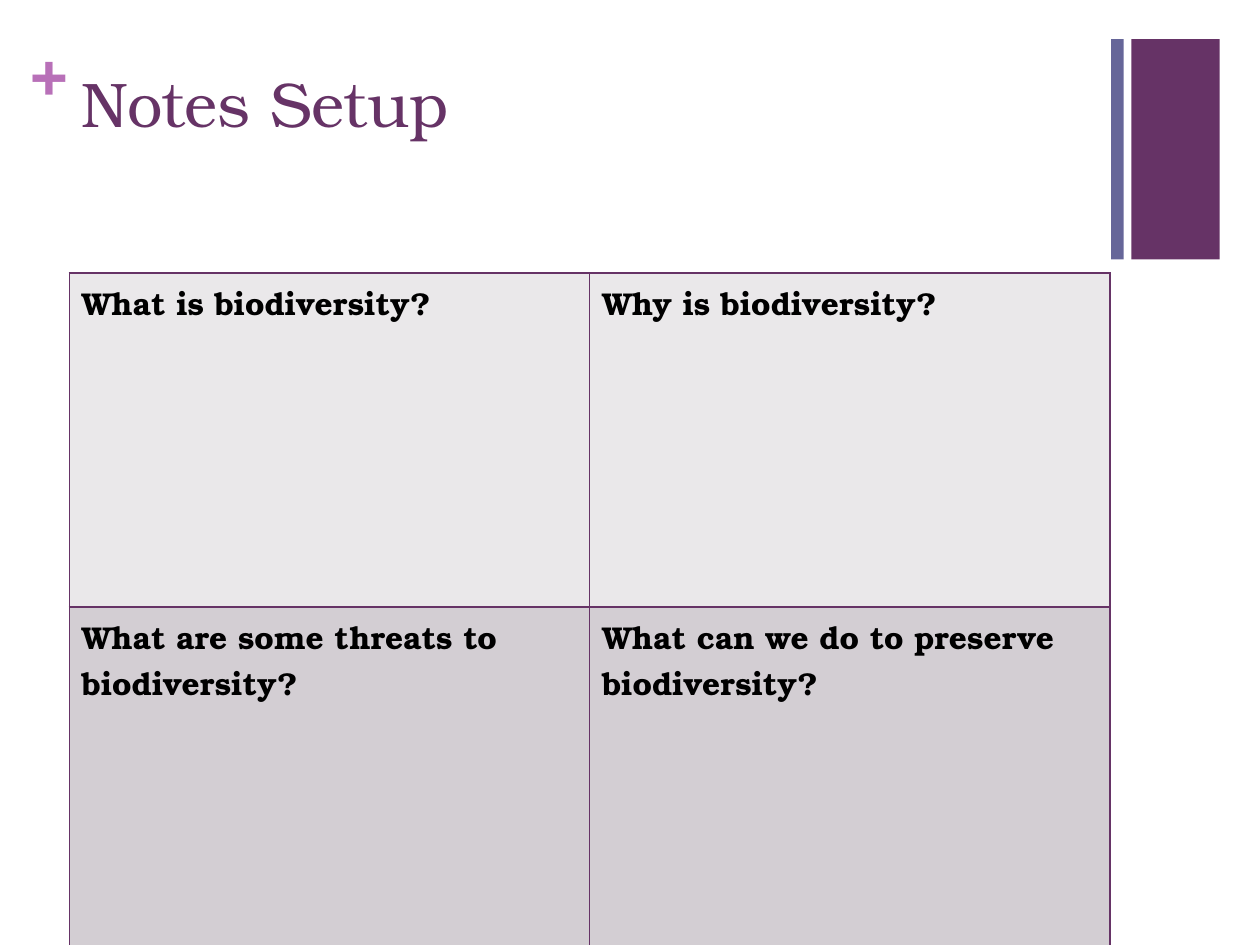
import pptx
import pptx.util
import pptx.dml.color
import pptx.enum.shapes
import pptx.oxml
import pptx.oxml.ns

Pt = pptx.util.Pt
FONT = "TeX Gyre Bonum"
PLUM = "663366"
TITLE = "Notes Setup"
ROWS = [
    ("EAE8EA", 191, ["What is biodiversity?", "Why is biodiversity?"]),
    ("D3CED3", 200, ["What are some threats to biodiversity?",
                     "What can we do to preserve biodiversity?"]),
]
BARS = [(646.5, 50.5, PLUM), (635, 7.2, "666699")]
LEFT, TOP, WIDTH = 39.6, 156, 594.8


def color(code):
    return pptx.dml.color.RGBColor.from_string(code)


def write(frame, text, size=18, ink="000000", bold=False, space=None):
    frame.word_wrap = True
    para = frame.paragraphs[0]
    para.line_spacing = space
    run = para.add_run()
    run.text = text
    font = run.font
    font.name, font.size, font.bold = FONT, Pt(size), bold
    font.color.rgb = color(ink)


def label(slide, box, text, inset=None, **style):
    frame = slide.shapes.add_textbox(*map(Pt, box)).text_frame
    if inset is not None:
        frame.margin_left = frame.margin_right = Pt(inset)
        frame.margin_top = frame.margin_bottom = Pt(inset)
    write(frame, text, **style)


def edge(cell, ink, width):
    props = cell._tc.get_or_add_tcPr()
    space = pptx.oxml.ns.nsdecls("a")
    for spot, side in enumerate("LRTB"):
        props.insert(spot, pptx.oxml.parse_xml(
            f'<a:ln{side} {space} w="{Pt(width)}"><a:solidFill>'
            f'<a:srgbClr val="{ink}"/></a:solidFill></a:ln{side}>'))


def bar(slide, left, width, fill):
    kind = pptx.enum.shapes.MSO_SHAPE.RECTANGLE
    shape = slide.shapes.add_shape(kind, Pt(left), Pt(22.3), Pt(width), Pt(126))
    shape.shadow.inherit = False
    shape.fill.solid()
    shape.fill.fore_color.rgb = color(fill)
    shape.line.fill.background()


def grid(slide):
    high = sum(row[1] for row in ROWS)
    table = slide.shapes.add_table(
        len(ROWS), 2, Pt(LEFT), Pt(TOP), Pt(WIDTH), Pt(high)).table
    table.first_row = table.horz_banding = False
    for r, (fill, tall, texts) in enumerate(ROWS):
        table.rows[r].height = Pt(tall)
        for c, text in enumerate(texts):
            cell = table.cell(r, c)
            cell.fill.solid()
            cell.fill.fore_color.rgb = color(fill)
            edge(cell, PLUM, 1)
            write(cell.text_frame, text, bold=True)


def main():
    deck = pptx.Presentation()
    deck.slide_width, deck.slide_height = Pt(720), Pt(540)
    slide = deck.slides.add_slide(deck.slide_layouts[6])
    for left, width, fill in BARS:
        bar(slide, left, width, fill)
    label(slide, (17.3, 18, 21, 44), "+", inset=0, size=36, ink="B870B8", bold=True)
    label(slide, (LEFT, 38.2, WIDTH, 87.8), TITLE, size=36, ink=PLUM, space=0.9)
    grid(slide)
    deck.save("out.pptx")


if __name__ == "__main__":
    main()
